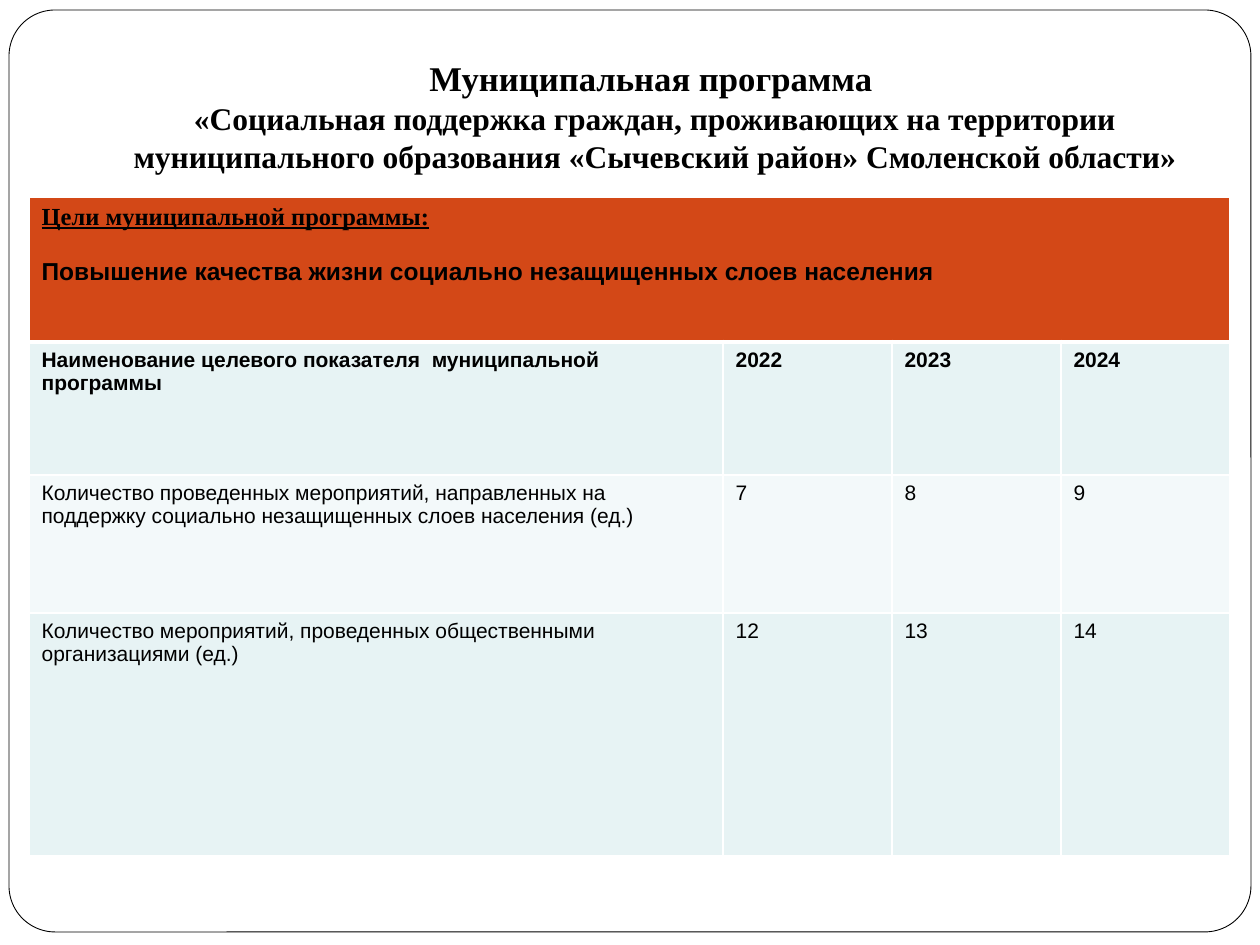
from lxml import etree
from pptx import Presentation
from pptx.dml.color import RGBColor
from pptx.enum.shapes import MSO_SHAPE
from pptx.enum.text import MSO_ANCHOR, MSO_AUTO_SIZE, PP_ALIGN
from pptx.oxml.ns import qn
from pptx.util import Emu, Pt

ROUNDED = MSO_SHAPE.ROUNDED_RECTANGLE
BOTTOM, CENTER, NO_FIT = MSO_ANCHOR.BOTTOM, PP_ALIGN.CENTER, MSO_AUTO_SIZE.NONE
SERIF, SANS = "Times New Roman", "Arial"
BLACK, WHITE, ORANGE = "000000", "FFFFFF", "D34817"
BANDS = ["E7F3F4", "F3F9FA"]

# Content
TITLE = [
    ("Муниципальная программа ", 19.8),
    ("«Социальная поддержка граждан, проживающих на территории", 18),
    ("муниципального образования «Сычевский район» Смоленской области»", 18),
]
GOAL_HEADING = "Цели муниципальной программы:"
GOAL = "Повышение качества жизни социально незащищенных слоев населения"
ROWS = [
    ("Наименование целевого показателя  муниципальной программы",
     "2022", "2023", "2024"),
    ("Количество проведенных мероприятий, направленных на поддержку "
     "социально незащищенных слоев населения (ед.)", "7", "8", "9"),
    ("Количество мероприятий, проведенных общественными организациями (ед.)",
     "12", "13", "14"),
]

# Geometry in px, 126 to the inch
FRAME = (9, 10, 1242, 922)
TITLE_BOX = (69, 29, 1172, 158)
TABLE_ORIGIN = (29, 197)
COLUMN_WIDTHS = [694, 169, 169, 169]
ROW_HEIGHTS = [145, 133, 138, 243]


def px(value):
    return Emu(round(value * 914400 / 126))


def color(hex_value):
    return RGBColor.from_string(hex_value)


def add_run(paragraph, text, **font_format):
    run = paragraph.add_run()
    run.text = text
    run.font.color.rgb = color(BLACK)
    for name, value in font_format.items():
        setattr(run.font, name, value)


def style_cell(cell, fill, top=1, bottom=1):
    properties = cell._tc.get_or_add_tcPr()
    for side, width in (("L", 1), ("R", 1), ("T", top), ("B", bottom)):
        line = etree.SubElement(properties, qn(f"a:ln{side}"), w=str(Pt(width)))
        solid = etree.SubElement(line, qn("a:solidFill"))
        etree.SubElement(solid, qn("a:srgbClr"), val=WHITE)
    cell.fill.solid()
    cell.fill.fore_color.rgb = color(fill)


presentation = Presentation()
presentation.slide_width, presentation.slide_height = px(1260), px(945)
slide = presentation.slides.add_slide(presentation.slide_layouts[5])

# Rounded frame behind everything
frame = slide.shapes.add_shape(ROUNDED, *map(px, FRAME))
frame.adjustments[0] = 0.05
frame.shadow.inherit = False
frame.fill.solid()
frame.fill.fore_color.rgb = color(WHITE)
frame.line.color.rgb = color(BLACK)
frame.line.width = Pt(0.5)
slide.shapes._spTree.insert(2, frame._element)

# Title
title = slide.shapes.title
title.left, title.top, title.width, title.height = map(px, TITLE_BOX)
title_format = {"word_wrap": True, "auto_size": NO_FIT,
                "vertical_anchor": BOTTOM, "margin_bottom": Pt(7.2)}
for name, value in title_format.items():
    setattr(title.text_frame, name, value)
paragraph = title.text_frame.paragraphs[0]
paragraph.alignment = CENTER
for index, (text, size) in enumerate(TITLE):
    if index:
        paragraph.add_line_break()
    add_run(paragraph, text, name=SERIF, size=Pt(size), bold=True)

# Table grid
table = slide.shapes.add_table(
    len(ROW_HEIGHTS), len(COLUMN_WIDTHS), *map(px, TABLE_ORIGIN),
    px(sum(COLUMN_WIDTHS)), px(sum(ROW_HEIGHTS))).table
for column, width in zip(table.columns, COLUMN_WIDTHS):
    column.width = px(width)
for row, height in zip(table.rows, ROW_HEIGHTS):
    row.height = px(height)

# Goal row across all columns
goal_cell = table.cell(0, 0)
goal_cell.merge(table.cell(0, len(COLUMN_WIDTHS) - 1))
for cell in table.rows[0].cells:
    style_cell(cell, ORANGE, bottom=3)
add_run(goal_cell.text_frame.paragraphs[0], GOAL_HEADING,
        name=SERIF, size=Pt(14), bold=True, underline=True)
paragraph = goal_cell.text_frame.add_paragraph()
paragraph.space_before = Pt(16)
add_run(paragraph, GOAL, name=SANS, size=Pt(14), bold=True)

# Indicator rows, the first one being their header
for row_index, texts in enumerate(ROWS):
    is_header = row_index == 0
    for column_index, text in enumerate(texts):
        cell = table.cell(row_index + 1, column_index)
        style_cell(cell, BANDS[row_index % 2], top=3 if is_header else 1)
        add_run(cell.text_frame.paragraphs[0], text,
                name=SANS, size=Pt(12), bold=is_header)

presentation.save("out.pptx")
